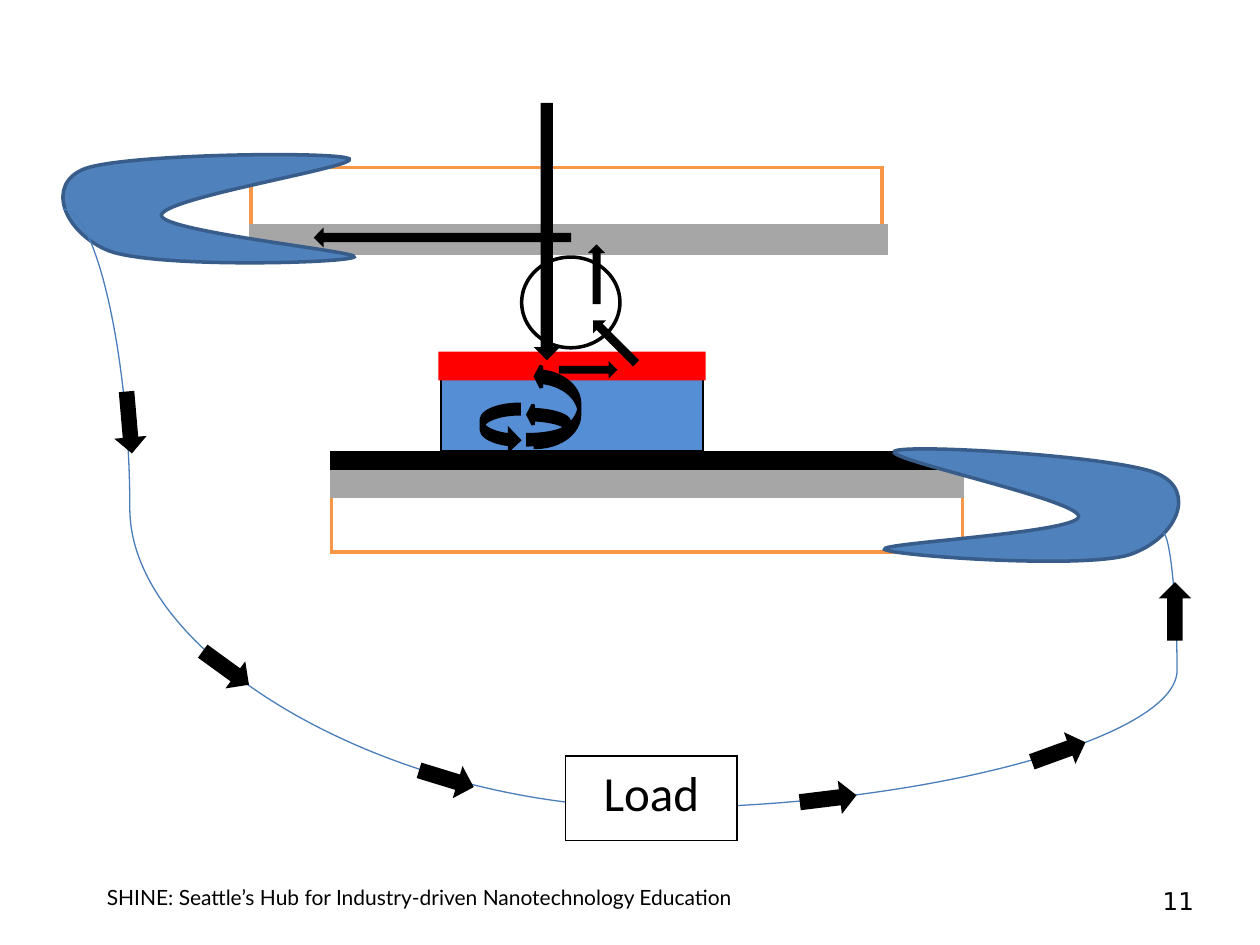
import math
import pptx
import pptx.util
import pptx.dml.color
import pptx.enum.shapes
import pptx.enum.text
import pptx.oxml
import pptx.oxml.ns

PX = 9144  # 100 px to the inch
KIND = pptx.enum.shapes.MSO_SHAPE
ALIGN = pptx.enum.text.PP_ALIGN
ANCHOR = pptx.enum.text.MSO_ANCHOR
NS = pptx.oxml.ns.nsdecls("a")

deck = pptx.Presentation()
deck.slide_width, deck.slide_height = 1000 * PX, 750 * PX
slide = deck.slides.add_slide(deck.slide_layouts[6])
shapes = slide.shapes


def paint(shape, fill, line=None, width=2):
    """Set fill and sharp-cornered line; no line colour means no line."""
    shape.shadow.inherit = False
    shape.fill.solid()
    shape.fill.fore_color.rgb = pptx.dml.color.RGBColor.from_string(fill)
    if line:
        shape.line.color.rgb = pptx.dml.color.RGBColor.from_string(line)
        shape.line.width = pptx.util.Pt(width)
        shape.line._get_or_add_ln().append(
            pptx.oxml.parse_xml(f'<a:miter {NS} lim="800000"/>'))
    else:
        shape.line.fill.background()


def write(shape, text, font, size):
    para = shape.text_frame.paragraphs[0]
    para.text = text
    para.font.name = font
    para.font.size = pptx.util.Pt(size)
    para.font.color.rgb = pptx.dml.color.RGBColor.from_string("000000")
    return para


# Layers of the cell, back to front
layers = [
    (KIND.RECTANGLE, 350, 300, 208, 58, "558ED5", "000000", 0.75),
    (KIND.FLOWCHART_PROCESS, 199, 133, 501, 46, "FFFFFF", "F79646", 2),
    (KIND.FLOWCHART_PROCESS, 263, 394, 501, 44, "FFFFFF", "F79646", 2),
    (KIND.FLOWCHART_PROCESS, 199, 179, 504, 22, "A6A6A6", "A6A6A6", 2),
    (KIND.FLOWCHART_PROCESS, 263, 372, 501, 22, "A6A6A6", "A6A6A6", 2),
    (KIND.RECTANGLE, 263, 359, 501, 13, "000000", "000000", 2),
    (KIND.RECTANGLE, 348, 279, 212, 23, "FF0000", None, 0),
    (KIND.OVAL, 414, 204, 78, 72, "FFFFFF", "000000", 2),
]
for kind, x, y, w, h, fill, line, width in layers:
    layer = shapes.add_shape(kind, x * PX, y * PX, w * PX, h * PX)
    paint(layer, fill, line, width)

# Clips: corner, turn, Bezier points as they lie on the slide, wire, bend
WIDE, HIGH = 226, 142
clips = [
    (698, 335, 203.6, [
        (702, 436), (695, 431), (855, 423), (856, 410), (858, 397),
        (699, 364), (710, 358), (720, 352), (888, 362), (919, 376),
        (950, 390), (934, 427), (897, 440), (860, 452), (709, 441),
        (702, 436)],
     (923, 423, 522, 641), -2800),
    (61, 98, 159.1, [
        (281, 204), (288, 200), (129, 184), (128, 171), (128, 157),
        (287, 132), (277, 126), (267, 120), (99, 122), (67, 134),
        (36, 146), (50, 184), (86, 199), (123, 213), (274, 209),
        (281, 204)],
     (50, 166, 520, 641), 11300),
]
for left, top, turn, dots, ends, bend in clips:
    cos, sin = math.cos(math.radians(turn)), math.sin(math.radians(turn))
    marks = []
    for x, y in dots:  # undo the turn about the middle of the box
        dx, dy = x - left - WIDE / 2, y - top - HIGH / 2
        u = round((dx * cos + dy * sin + WIDE / 2) * PX)
        v = round((dy * cos - dx * sin + HIGH / 2) * PX)
        marks.append(f'<a:pt x="{u}" y="{v}"/>')
    curves = "".join(
        f'<a:cubicBezTo>{"".join(marks[i:i + 3])}</a:cubicBezTo>'
        for i in range(1, len(marks), 3))
    pen = shapes.build_freeform(left * PX, top * PX)
    pen.add_line_segments([((left + WIDE) * PX, (top + HIGH) * PX)])
    clip = pen.convert_to_shape()
    trace = clip._element.spPr.find(".//" + pptx.oxml.ns.qn("a:path"))
    trace.getparent().replace(trace, pptx.oxml.parse_xml(
        f'<a:path {NS} w="{WIDE * PX}" h="{HIGH * PX}">'
        f'<a:moveTo>{marks[0]}</a:moveTo>{curves}<a:close/></a:path>'))
    clip.rotation = turn
    paint(clip, "4F81BD", "385D8A")

    wire = shapes.add_connector(pptx.enum.shapes.MSO_CONNECTOR.CURVE,
                                *[end * PX for end in ends])
    wire.line.color.rgb = pptx.dml.color.RGBColor.from_string("4A7EBB")
    wire.line.width = pptx.util.Pt(0.75)
    props = wire._element.spPr
    props.append(pptx.oxml.parse_xml(f'<a:effectLst {NS}/>'))
    props.prstGeom.get_or_add_avLst().append(pptx.oxml.parse_xml(
        f'<a:gd {NS} name="adj1" fmla="val {bend}"/>'))

load = shapes.add_shape(KIND.RECTANGLE, 449 * PX, 600 * PX, 136 * PX, 67 * PX)
paint(load, "FFFFFF", "000000", 0.75)
load.text_frame.vertical_anchor = ANCHOR.TOP
para = write(load, "Load", "Calibri", 28)
para.alignment = ALIGN.CENTER
para.space_after = pptx.util.Pt(10)

# Arrows: kind, box, turn, and head length where it is not the preset one
arrows = [
    (KIND.UP_ARROW, 93, 312, 19, 46, 175, None),
    (KIND.UP_ARROW, 923, 464, 19, 43, 0, None),
    (KIND.UP_ARROW, 169, 509, 20, 42, 126, None),
    (KIND.UP_ARROW, 344, 597, 20, 42, 107, None),
    (KIND.UP_ARROW, 647, 613, 20, 42, 83, None),
    (KIND.UP_ARROW, 830, 576, 20, 42, 70, None),
    (KIND.DOWN_ARROW, 427, 83, 14, 201, 0, None),
    (KIND.UP_ARROW, 470, 196, 7, 44, 0, None),
    (KIND.UP_ARROW, 347, 88, 9, 201, 270, None),
    (KIND.CURVED_RIGHT_ARROW, 382, 321, 30, 36, 0, None),
    (KIND.CURVED_RIGHT_ARROW, 419, 321, 33, 32, 180, 0.13),
    (KIND.UP_ARROW, 484, 249, 8, 45, 315, None),
    (KIND.UP_ARROW, 463, 272, 7, 43, 90, None),
    (KIND.CURVED_RIGHT_ARROW, 425, 290, 35, 65, 180, 0.13),
]
for kind, x, y, w, h, turn, head in arrows:
    arrow = shapes.add_shape(kind, x * PX, y * PX, w * PX, h * PX)
    paint(arrow, "000000", "000000")
    arrow.rotation = turn
    if head:
        arrow.adjustments[2] = head

foot = shapes.add_textbox(75 * PX, 692 * PX, 533 * PX, 40 * PX)
foot.text_frame.word_wrap = True
foot.text_frame.vertical_anchor = ANCHOR.MIDDLE
write(foot, "SHINE: Seattle’s Hub for Industry-driven Nanotechnology Education",
      "Lato", 12)

page = shapes.add_textbox(913 * PX, 693 * PX, 50 * PX, 40 * PX)
page.text_frame.word_wrap = True
page.text_frame.margin_top = 10 * PX
write(page, "11", "DejaVu Sans", 14)

deck.save("out.pptx")
